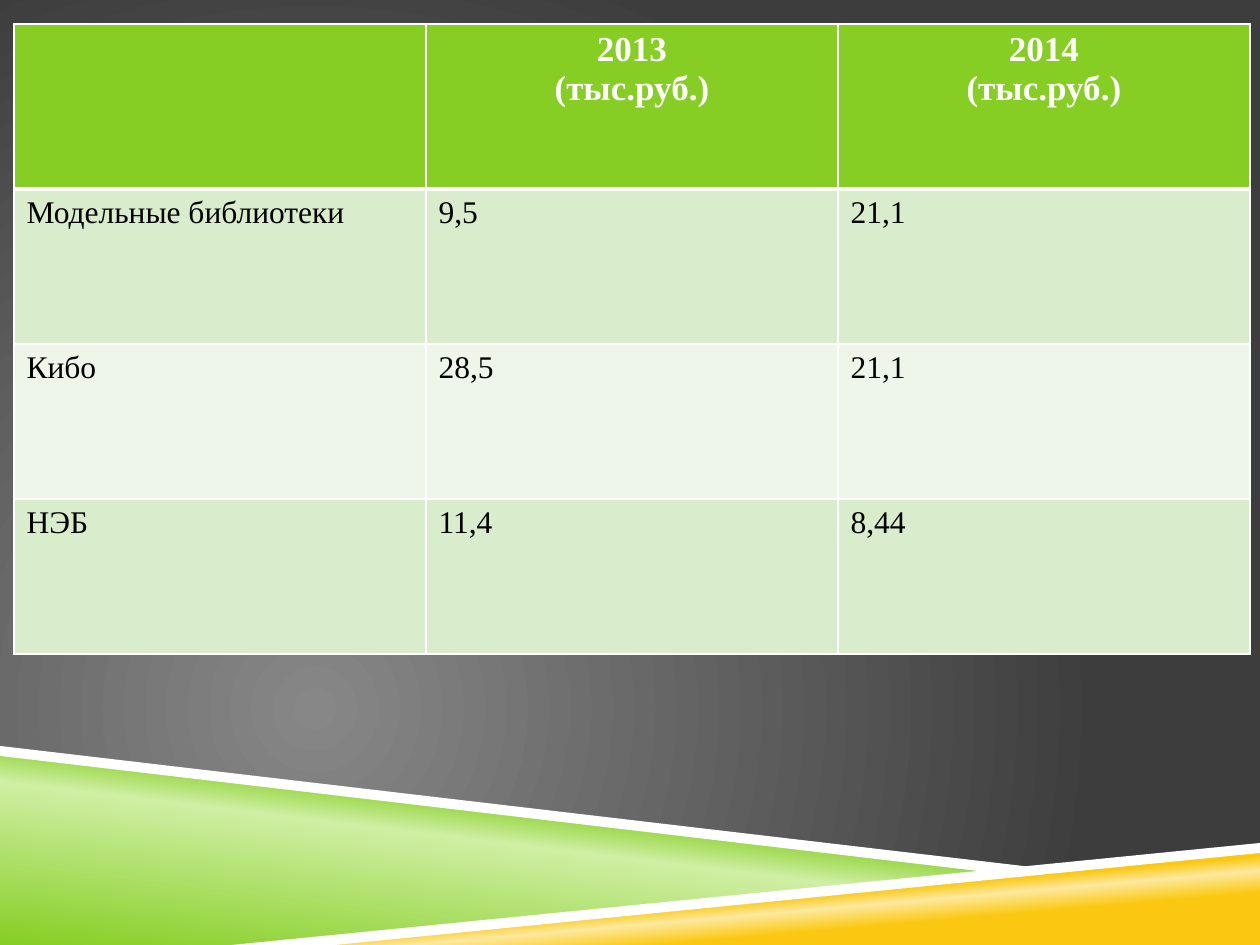
from dataclasses import dataclass

from lxml import etree
from pptx import Presentation
from pptx.dml.color import RGBColor
from pptx.enum.text import PP_ALIGN
from pptx.oxml.ns import qn
from pptx.util import Emu, Pt

CENTER = PP_ALIGN.CENTER
LEFT = PP_ALIGN.LEFT
SCALE = 914400 / 126  # EMU per px
WIDE, HIGH = 1260, 945


@dataclass(frozen=True)
class Theme:
    font: str = "Times New Roman"
    head_size: int = 20
    body_size: int = 18
    white: str = "FFFFFF"
    black: str = "000000"
    green: str = "86CE24"
    pale: str = "CFEFA4"
    gold: str = "FAC810"
    cream: str = "FDE99F"
    bands: tuple = ("D9EDCD", "EDF6E8")
    back: tuple = ((0, "878787"), (100, "3D3D3D"))


THEME = Theme()

ROWS = [
    ["", "2013\n(тыс.руб.)", "2014\n(тыс.руб.)"],
    ["Модельные библиотеки", "9,5", "21,1"],
    ["Кибо", "28,5", "21,1"],
    ["НЭБ", "11,4", "8,44"],
]


def px(n):
    return Emu(round(n * SCALE))


def add(parent, tag, **attrs):
    node = etree.SubElement(parent, qn(tag))
    for key, value in attrs.items():
        node.set(key, str(value))
    return node


def set_stops(fill, root, stops):
    """Switch fill to a gradient with these stops and return its element."""
    fill.gradient()
    grad = next(root.iter(qn("a:gradFill")))
    for child in list(grad):
        grad.remove(child)
    items = add(grad, "a:gsLst")
    for pos, color in stops:
        stop = add(items, "a:gs", pos=pos * 1000)
        add(stop, "a:srgbClr", val=color)
    return grad


def set_back(slide):
    grad = set_stops(slide.background.fill, slide.element, THEME.back)
    ring = add(grad, "a:path", path="circle")
    add(ring, "a:fillToRect", l=50000, t=100000, r=100000, b=50000)


def add_band(slide, points, color=None, stops=None, angle=0):
    build = slide.shapes.build_freeform(*points[0], scale=SCALE)
    build.add_line_segments(points[1:], close=True)
    shape = build.convert_to_shape()
    shape.shadow.inherit = False
    shape.line.fill.background()
    if stops:
        grad = set_stops(shape.fill, shape.element.spPr, stops)
        add(grad, "a:lin", ang=angle * 60000, scaled=0)
    else:
        shape.fill.solid()
        shape.fill.fore_color.rgb = RGBColor.from_string(color)


def set_edges(cell, top, bottom):
    props = cell._tc.get_or_add_tcPr()
    for side, width in (("L", 1), ("R", 1), ("T", top), ("B", bottom)):
        line = add(props, f"a:ln{side}", w=Pt(width))
        paint = add(line, "a:solidFill")
        add(paint, "a:srgbClr", val=THEME.white)


def fill_cell(cell, text, row):
    head = row == 0
    set_edges(cell, top=3 if row == 1 else 1, bottom=3 if head else 1)
    cell.fill.solid()
    color = THEME.green if head else THEME.bands[(row - 1) % 2]
    cell.fill.fore_color.rgb = RGBColor.from_string(color)
    cell.text_frame.text = text
    for para in cell.text_frame.paragraphs:
        para.alignment = CENTER if head else LEFT
        for run in para.runs:
            font = run.font
            font.name = THEME.font
            font.bold = head
            font.size = Pt(THEME.head_size if head else THEME.body_size)
            ink = THEME.white if head else THEME.black
            font.color.rgb = RGBColor.from_string(ink)


def add_grid(slide, left, top, col, heights):
    count = len(ROWS[0])
    table = slide.shapes.add_table(
        len(ROWS), count, px(left), px(top), px(col * count), px(sum(heights))
    ).table
    for column in table.columns:
        column.width = px(col)
    for r, (texts, height) in enumerate(zip(ROWS, heights)):
        table.rows[r].height = px(height)
        for c, text in enumerate(texts):
            fill_cell(table.cell(r, c), text, r)


def main():
    deck = Presentation()
    deck.slide_width, deck.slide_height = px(WIDE), px(HIGH)
    slide = deck.slides.add_slide(deck.slide_layouts[6])
    set_back(slide)

    # Coloured wedges
    add_band(
        slide, [(0, 752), (998, 872), (252, HIGH), (0, HIGH)], angle=277,
        stops=[(0, THEME.green), (52, THEME.pale), (66, THEME.green)],
    )
    add_band(
        slide, [(250, HIGH), (WIDE, 847), (WIDE, HIGH)], angle=265,
        stops=[(28, THEME.gold), (40, THEME.cream), (48, THEME.gold)],
    )

    # White stripes along the wedges
    add_band(slide, [(0, 746), (0, 756), (995, 873), (1048, 869)], THEME.white)
    add_band(
        slide, [(WIDE, 843), (232, HIGH), (335, HIGH), (WIDE, 853)], THEME.white
    )

    # Spending table
    add_grid(slide, left=14, top=24, col=412, heights=[165, 155, 155, 155])
    deck.save("out.pptx")


if __name__ == "__main__":
    main()
